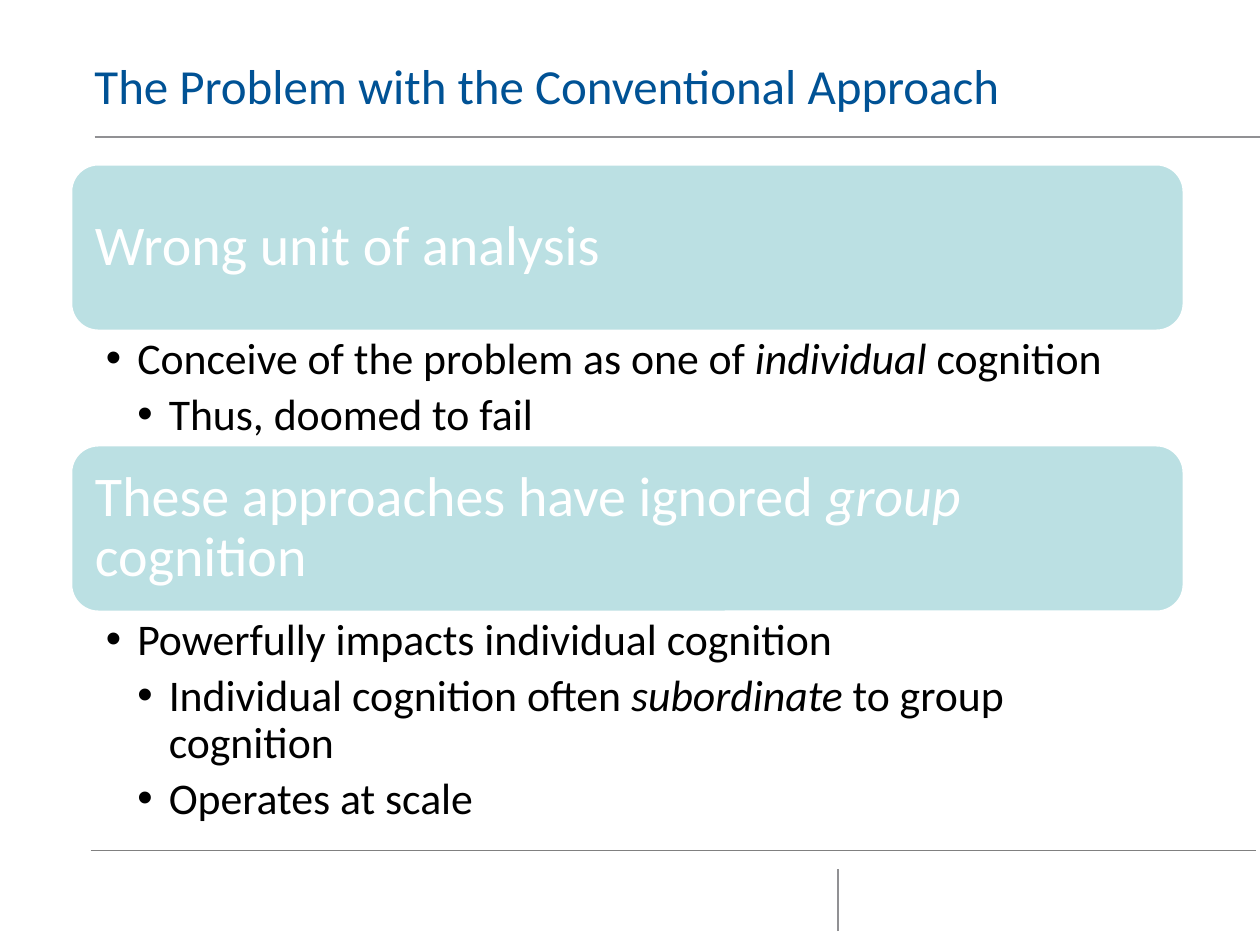
from dataclasses import dataclass

from lxml.etree import SubElement
from pptx import Presentation
from pptx.dml.color import RGBColor as RGB
from pptx.enum.shapes import MSO_CONNECTOR as CONN, MSO_SHAPE as SHAPE
from pptx.enum.text import MSO_ANCHOR as ANCHOR, PP_ALIGN as ALIGN
from pptx.oxml.ns import qn
from pptx.util import Inches, Pt


@dataclass(frozen=True)
class Theme:
    font: str = "Calibri"
    title: RGB = RGB(0x00, 0x52, 0x95)
    bar: RGB = RGB(0xBB, 0xE0, 0xE3)
    white: RGB = RGB(0xFF, 0xFF, 0xFF)
    black: RGB = RGB(0x00, 0x00, 0x00)
    rule: RGB = RGB(0x91, 0x91, 0x94)
    footer_rule: RGB = RGB(0x80, 0x80, 0x80)
    title_size: int = 28
    bar_size: int = 32
    bullet_size: int = 25


THEME = Theme()
LEFT, WIDTH, BAR_HEIGHT = 0.56, 8.84, 1.33
INDENT = 0.25

# Bar top, heading, height of the bullet box, bullets as (level, text)
SECTIONS = [
    (1.3, "Wrong unit of analysis", 0.91, [
        (1, "Conceive of the problem as one of *individual *cognition"),
        (2, "Thus, doomed to fail"),
    ]),
    (3.53, "These approaches have ignored *group *cognition", 1.7, [
        (1, "Powerfully impacts individual cognition"),
        (2, "Individual cognition often *subordinate* to group cognition"),
        (2, "Operates at scale"),
    ]),
]


def set_frame(tf, insets, anchor=ANCHOR.TOP):
    tf.word_wrap = True
    tf.vertical_anchor = anchor
    (tf.margin_left, tf.margin_top,
     tf.margin_right, tf.margin_bottom) = map(Inches, insets)


def write(p, text, *, size, color, spacing=0.9, after=0):
    """Fill a paragraph; text between asterisks is italic."""
    p.alignment = ALIGN.LEFT
    p.line_spacing = spacing
    p.space_before, p.space_after = Pt(0), Pt(after)
    for i, part in enumerate(text.split("*")):
        if part:
            r = p.add_run()
            r.text = part
            r.font.name, r.font.size = THEME.font, Pt(size)
            r.font.color.rgb = color
            r.font.italic = i % 2 == 1


def set_bullet(p, level):
    p.level = level
    pPr = p._p.get_or_add_pPr()
    pPr.set("marL", str(Inches(INDENT * level)))
    pPr.set("indent", str(-Inches(INDENT)))
    SubElement(pPr, qn("a:buFont")).set("typeface", "Arial")
    SubElement(pPr, qn("a:buChar")).set("char", "•")


def add_rule(s, x1, y1, x2, y2, color):
    line = s.shapes.add_connector(CONN.STRAIGHT, *map(Inches, (x1, y1, x2, y2)))
    line.line.color.rgb = color
    line.line.width = Pt(1)
    SubElement(line._element.spPr, qn("a:effectLst"))


def add_title(s, text):
    box = s.shapes.add_textbox(*map(Inches, (0.75, 0.46, 8.63, 0.6)))
    set_frame(box.text_frame, (0, 0, 0, 0))
    write(box.text_frame.paragraphs[0], text, size=THEME.title_size,
          color=THEME.title, spacing=Pt(32))


def add_bar(s, top, text):
    sp = s.shapes.add_shape(SHAPE.ROUNDED_RECTANGLE,
                            *map(Inches, (LEFT, top, WIDTH, BAR_HEIGHT)))
    sp.shadow.inherit = False
    sp.fill.solid()
    sp.fill.fore_color.rgb = THEME.bar
    sp.line.color.rgb = THEME.white
    sp.line.width = Pt(2)
    set_frame(sp.text_frame, (0.13,) * 4, ANCHOR.MIDDLE)
    write(sp.text_frame.paragraphs[0], text, size=THEME.bar_size,
          color=THEME.white)


def add_bullets(s, top, height, items):
    box = s.shapes.add_textbox(*map(Inches, (LEFT, top, WIDTH, height)))
    tf = box.text_frame
    set_frame(tf, (0.28, 0.04, 0.25, 0.04))
    for i, (level, text) in enumerate(items):
        p = tf.add_paragraph() if i else tf.paragraphs[0]
        set_bullet(p, level)
        write(p, text, size=THEME.bullet_size, color=THEME.black, after=5)


def main():
    prs = Presentation()
    prs.slide_width, prs.slide_height = Inches(10), Inches(7.5)
    s = prs.slides.add_slide(prs.slide_layouts[6])

    # Header and footer rules
    add_rule(s, 0.72, 6.75, 9.97, 6.75, THEME.footer_rule)
    add_rule(s, 0.75, 1.09, 10, 1.09, THEME.rule)
    add_rule(s, 6.65, 7.39, 6.65, 6.9, THEME.rule)

    # Title and sections
    add_title(s, "The Problem with the Conventional Approach")
    for top, heading, height, items in SECTIONS:
        add_bar(s, top, heading)
        add_bullets(s, top + BAR_HEIGHT, height, items)

    prs.save("out.pptx")


if __name__ == "__main__":
    main()
